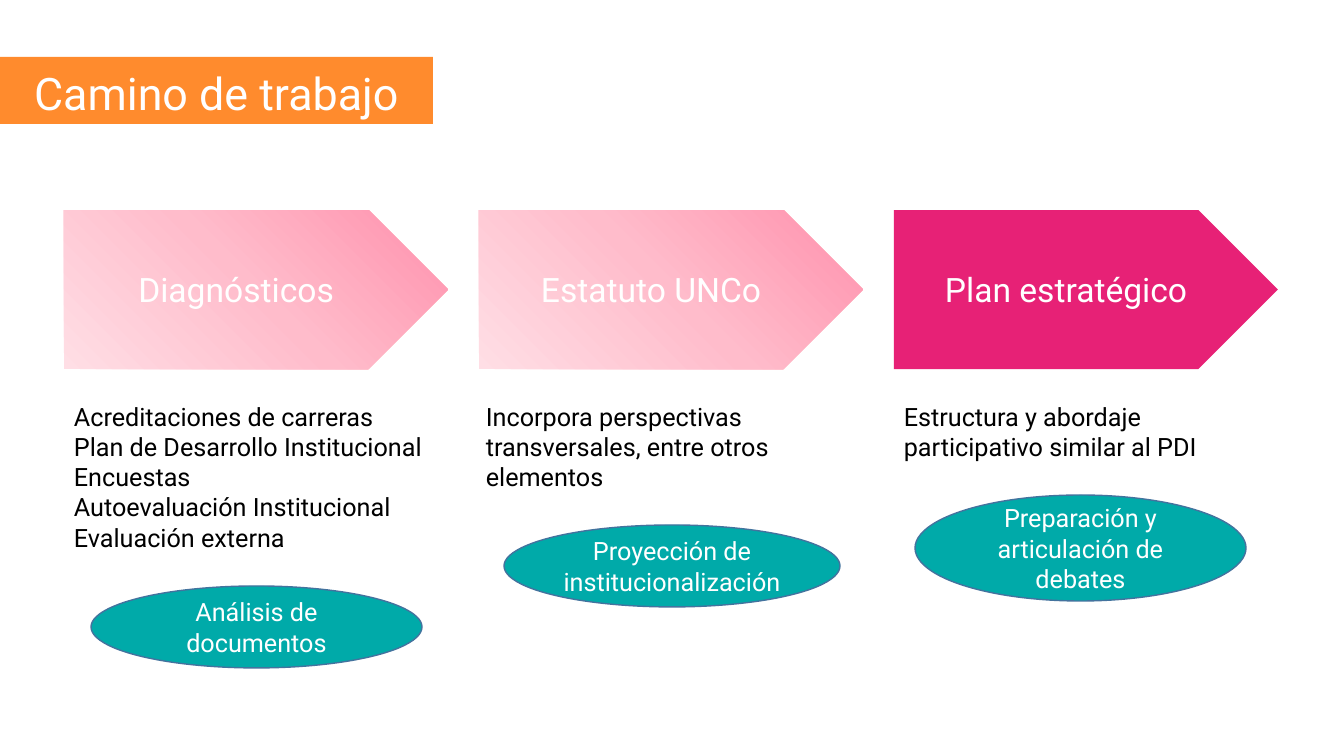
from pptx import Presentation
from pptx.dml.color import RGBColor
from pptx.enum.shapes import MSO_SHAPE as SHAPE
from pptx.enum.text import MSO_ANCHOR as ANCHOR, PP_ALIGN as ALIGN
from pptx.oxml import parse_xml
from pptx.oxml.ns import nsdecls
from pptx.util import Emu, Pt

FONT = "Roboto"
WHITE, BLACK, ORANGE = "FFFFFF", "000000", "FF8B2D"
TEAL, TEAL_EDGE, MAGENTA = "00AAA9", "43739E", "E72176"
PINKS = ["FF91AD", "FFBCCB", "FFDEE5"]

LEFT, PITCH, COL_W = 64, 415, 384
ARROW_Y, ARROW_H, NOTES_Y = 210, 159, 396

# heading, arrow fill, notes, notes (left, height), ellipse text, ellipse box
STEPS = [
    ("Diagnósticos", PINKS,
     ["Acreditaciones de carreras", "Plan de Desarrollo Institucional",
      "Encuestas", "Autoevaluación Institucional", "Evaluación externa"],
     (64, 163), "Análisis de documentos", (91, 586, 331, 82)),
    ("Estatuto UNCo", PINKS,
     ["Incorpora perspectivas transversales, entre otros elementos"],
     (476, 102), "Proyección de institucionalización", (504, 525, 336, 82)),
    ("Plan estratégico", MAGENTA,
     ["Estructura y abordaje participativo similar al PDI"],
     (894, 72), "Preparación y articulación de debates", (915, 495, 331, 106)),
]


def px(n):
    return Emu(round(n * 914400 / 100.8))


def color(hex_code):
    return RGBColor.from_string(hex_code)


def write(tf, lines, size, hex_code, align, anchor):
    tf.word_wrap = True
    tf.vertical_anchor = anchor
    for i, line in enumerate(lines):
        p = tf.paragraphs[0] if i == 0 else tf.add_paragraph()
        p.alignment = align
        r = p.add_run()
        r.text = line
        r.font.name, r.font.size = FONT, Pt(size)
        r.font.color.rgb = color(hex_code)


def radial_fill(sp, colors):
    """Fill with a circular gradient spreading from the top right corner."""
    sp.fill.solid()
    step = 100000 // (len(colors) - 1)
    stops = "".join(f'<a:gs pos="{i * step}"><a:srgbClr val="{c}"/></a:gs>'
                    for i, c in enumerate(colors))
    grad = parse_xml(
        f'<a:gradFill {nsdecls("a")} rotWithShape="1"><a:gsLst>{stops}</a:gsLst>'
        '<a:path path="circle"><a:fillToRect l="100000" b="100000"/></a:path>'
        '</a:gradFill>')
    spPr = sp._element.spPr
    spPr.replace(spPr.solidFill, grad)


def add_block(s, kind, box, fill, text, size, edge=None, anchor=ANCHOR.MIDDLE):
    sp = s.shapes.add_shape(kind, *map(px, box))
    sp.shadow.inherit = False
    if isinstance(fill, list):
        radial_fill(sp, fill)
    else:
        sp.fill.solid()
        sp.fill.fore_color.rgb = color(fill)
    if edge:
        sp.line.color.rgb = color(edge)
        sp.line.width = Pt(1)
    else:
        sp.line.fill.background()
    write(sp.text_frame, [text], size, WHITE, ALIGN.CENTER, anchor)


def add_notes(s, box, lines):
    tb = s.shapes.add_textbox(*map(px, box))
    write(tb.text_frame, lines, 18, BLACK, ALIGN.LEFT, ANCHOR.TOP)


def main():
    prs = Presentation()
    prs.slide_width, prs.slide_height = px(1344), px(756)
    s = prs.slides.add_slide(prs.slide_layouts[6])
    add_block(s, SHAPE.RECTANGLE, (0, 57, 433, 67), ORANGE,
              "Camino de trabajo", 32, anchor=ANCHOR.BOTTOM)
    for i, (head, fill, notes, (x, h), result, oval) in enumerate(STEPS):
        add_block(s, SHAPE.PENTAGON,
                  (LEFT + i * PITCH, ARROW_Y, COL_W, ARROW_H), fill, head, 24)
        add_notes(s, (x, NOTES_Y, COL_W, h), notes)
        add_block(s, SHAPE.OVAL, oval, TEAL, result, 18, edge=TEAL_EDGE)
    prs.save("out.pptx")


if __name__ == "__main__":
    main()
